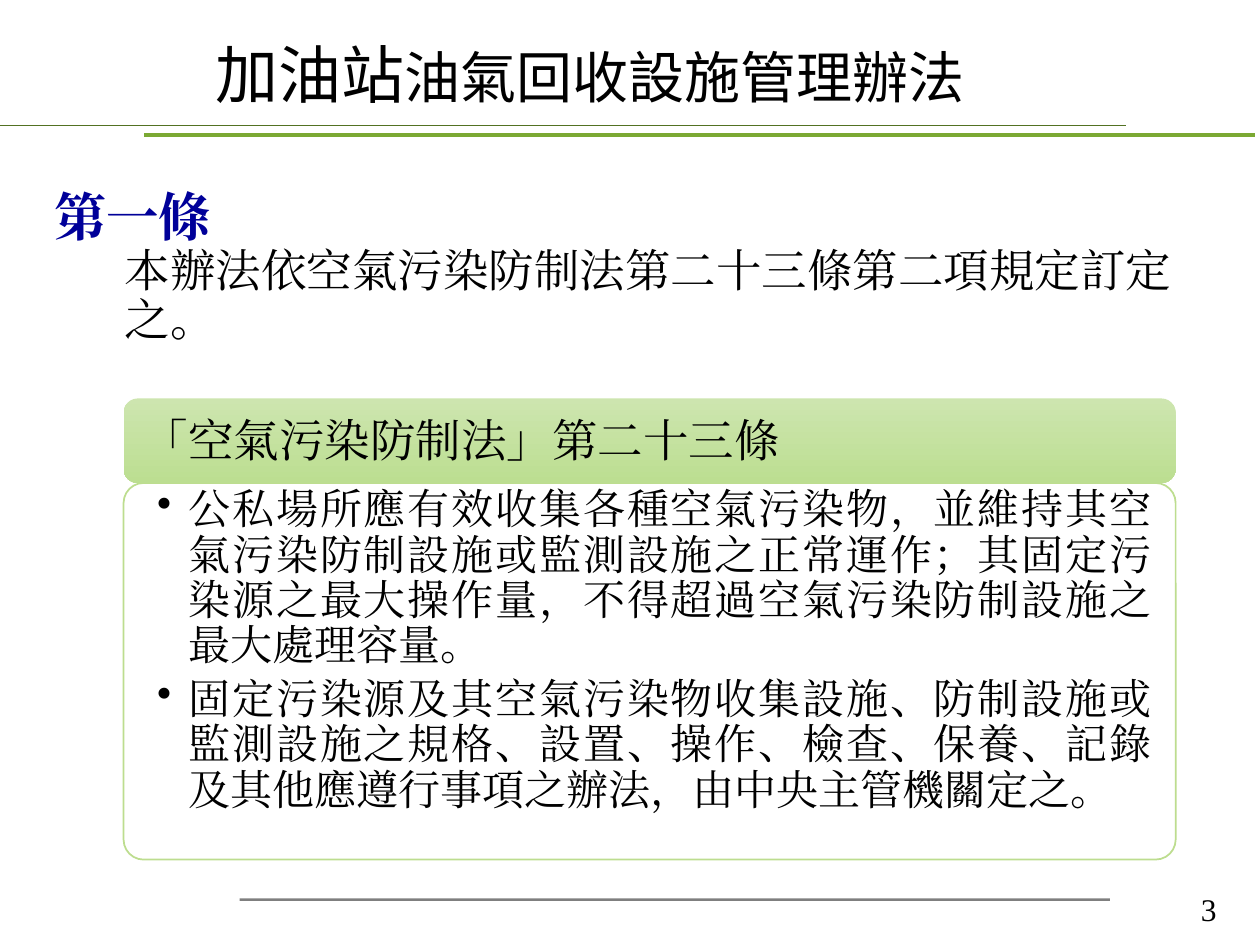
from dataclasses import dataclass

from lxml import etree
from pptx import Presentation
from pptx.dml.color import RGBColor
from pptx.enum.shapes import MSO_CONNECTOR, MSO_SHAPE
from pptx.enum.text import MSO_ANCHOR, PP_ALIGN
from pptx.oxml.ns import qn
from pptx.util import Pt

STRAIGHT = MSO_CONNECTOR.STRAIGHT
ROUNDED = MSO_SHAPE.ROUNDED_RECTANGLE
TOP, MIDDLE = MSO_ANCHOR.TOP, MSO_ANCHOR.MIDDLE
LEFT, CENTER, JUSTIFY = PP_ALIGN.LEFT, PP_ALIGN.CENTER, PP_ALIGN.JUSTIFY


@dataclass(frozen=True)
class Theme:
    text: str = "000000"
    heading: str = "000099"
    thin_rule: str = "527122"
    thick_rule: str = "7BA933"
    frame: str = "BDDD8F"
    banner_top: str = "CDE5AF"
    banner_bottom: str = "BCDE91"
    title_font: str = "Noto Sans CJK SC"
    body_font: str = "Times New Roman"
    title_lead: int = 36
    title: int = 32
    article: int = 30
    clause: int = 26
    bullet: int = 24
    number: int = 18


THEME = Theme()


def rgb(code):
    return RGBColor.from_string(code)


def add_rule(slide, x1, x2, y, color, width, alpha=None):
    rule = slide.shapes.add_connector(STRAIGHT, Pt(x1), Pt(y), Pt(x2), Pt(y))
    rule.line.color.rgb = rgb(color)
    rule.line.width = Pt(width)
    properties = rule._element.spPr
    etree.SubElement(properties, qn("a:effectLst"))
    if alpha:
        shade = properties.find(".//" + qn("a:srgbClr"))
        etree.SubElement(shade, qn("a:alpha"), val=str(alpha * 1000))


def add_text_frame(slide, box, insets=(7.2, 3.6, 7.2, 3.6), anchor=TOP):
    frame = slide.shapes.add_textbox(*map(Pt, box)).text_frame
    frame.word_wrap = True
    frame.vertical_anchor = anchor
    (frame.margin_left, frame.margin_top,
     frame.margin_right, frame.margin_bottom) = map(Pt, insets)
    return frame


def set_font(font, size, name=THEME.body_font, color=THEME.text, bold=False):
    font.size = Pt(size)
    font.bold = bold
    font.color.rgb = rgb(color)
    font.name = name
    etree.SubElement(font._element, qn("a:ea"), typeface=name)


def write(paragraph, text, size, align=LEFT, indent=0, hanging=0,
          bullet=None, after=0, **style):
    paragraph.text = text
    paragraph.alignment = align
    paragraph.line_spacing = 0.9
    paragraph.space_after = Pt(after)
    properties = paragraph._p.get_or_add_pPr()
    properties.set("marL", str(Pt(indent)))
    properties.set("indent", str(Pt(-hanging)))
    if bullet:
        etree.SubElement(properties, qn("a:buChar"), char=bullet)
    for run in paragraph.runs:
        set_font(run.font, size, **style)


def add_title(slide, box):
    paragraph = add_text_frame(slide, box, anchor=MIDDLE).paragraphs[0]
    paragraph.alignment = JUSTIFY
    paragraph.line_spacing = 0.9
    for text, size in (("加油站", THEME.title_lead),
                       ("油氣回收設施管理辦法", THEME.title)):
        run = paragraph.add_run()
        run.text = text
        set_font(run.font, size, name=THEME.title_font)


def add_article(slide, box):
    frame = add_text_frame(slide, box)
    write(frame.paragraphs[0], "第一條", THEME.article,
          color=THEME.heading, bold=True)
    write(frame.add_paragraph(),
          "本辦法依空氣污染防制法第二十三條第二項規定訂定之。",
          THEME.clause, indent=40.3)


def add_law_panel(slide, box, banner_height):
    left, top, width, height = box
    body_top, body_height = top + banner_height, height - banner_height

    # Outlined body
    outline = slide.shapes.add_shape(
        ROUNDED, Pt(left), Pt(body_top), Pt(width), Pt(body_height))
    outline.adjustments[0] = 0.053
    outline.shadow.inherit = False
    outline.fill.background()
    outline.line.color.rgb = rgb(THEME.frame)
    outline.line.width = Pt(1)

    # Gradient banner
    banner = slide.shapes.add_shape(
        ROUNDED, Pt(left), Pt(top), Pt(width), Pt(banner_height))
    banner.shadow.inherit = False
    banner.line.fill.background()
    banner.fill.gradient()
    banner.fill.gradient_angle = 270
    for stop, color in zip(banner.fill.gradient_stops,
                           (THEME.banner_top, THEME.banner_bottom)):
        stop.color.rgb = rgb(color)
    caption = add_text_frame(
        slide, (left + 3, top + 3, width - 6, banner_height - 4),
        (7.9,) * 4, MIDDLE)
    write(caption.paragraphs[0], "「空氣污染防制法」第二十三條", THEME.clause)

    # Bulleted provisions
    provisions = (
        "公私場所應有效收集各種空氣污染物，並維持其空氣污染防制設施或監測設施之"
        "正常運作；其固定污染源之最大操作量，不得超過空氣污染防制設施之最大處理容量。",
        "固定污染源及其空氣污染物收集設施、防制設施或監測設施之規格、設置、操作、"
        "檢查、保養、記錄及其他應遵行事項之辦法，由中央主管機關定之。",
    )
    frame = add_text_frame(slide, (left, body_top + 0.7, width, body_height - 6),
                           (19.1, 2.4, 13.5, 2.4))
    for index, provision in enumerate(provisions):
        paragraph = frame.add_paragraph() if index else frame.paragraphs[0]
        write(paragraph, provision, THEME.bullet, JUSTIFY, indent=18,
              hanging=18, bullet="•", after=4.8)


def add_page_number(slide, box):
    frame = add_text_frame(slide, box, anchor=MIDDLE)
    write(frame.paragraphs[0], "3", THEME.number, CENTER)


def main():
    deck = Presentation()
    deck.slide_width, deck.slide_height = Pt(720), Pt(540)
    slide = deck.slides.add_slide(deck.slide_layouts[6])

    # Rules below the title and above the footer
    add_rule(slide, 137, 634.3, 514.1, THEME.text, 1.5, alpha=50)
    add_rule(slide, 0, 643.5, 71.5, THEME.thin_rule, 0.5)
    add_rule(slide, 82.3, 717.3, 77, THEME.thick_rule, 2.25)

    add_title(slide, (115.9, 18, 566.6, 53.3))
    add_article(slide, (23.8, 105.8, 660.2, 100))
    add_law_panel(slide, (70.6, 227.7, 601.2, 263.5), 48.3)
    add_page_number(slide, (670.3, 502.6, 41, 36))
    deck.save("out.pptx")


if __name__ == "__main__":
    main()
